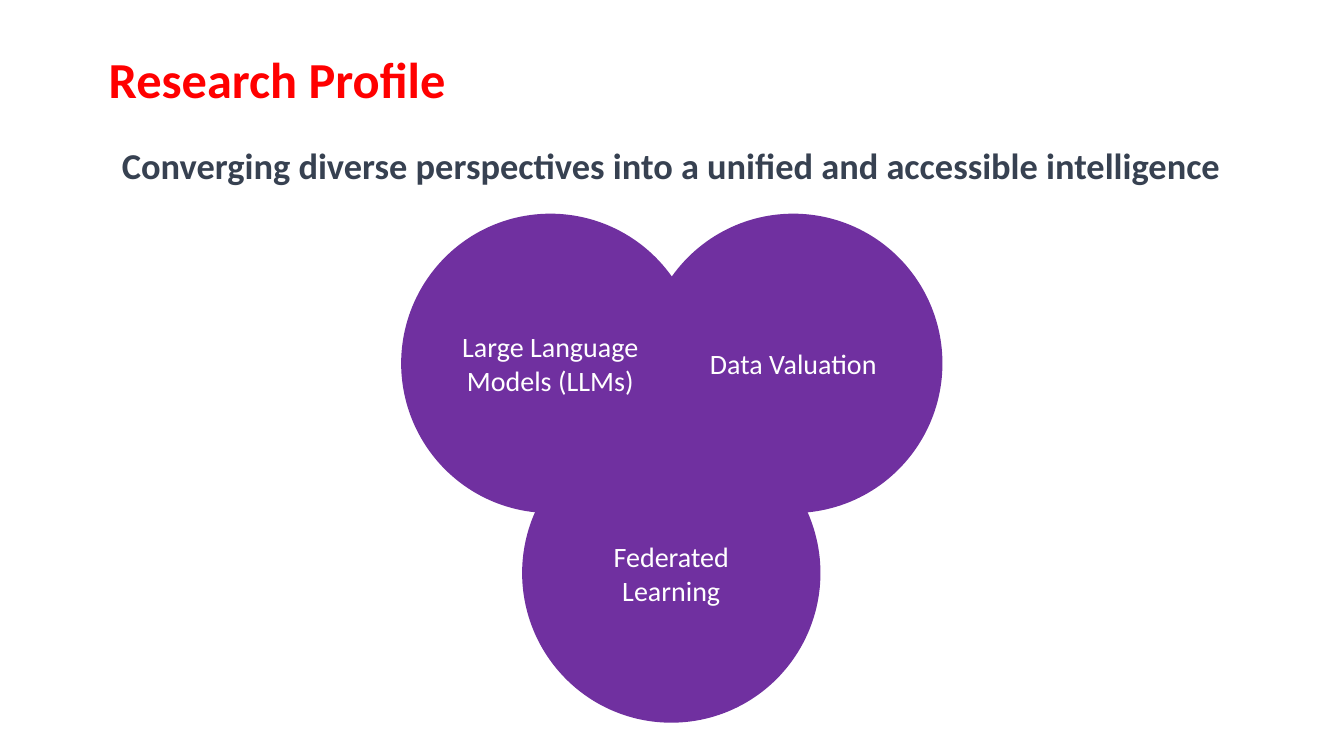
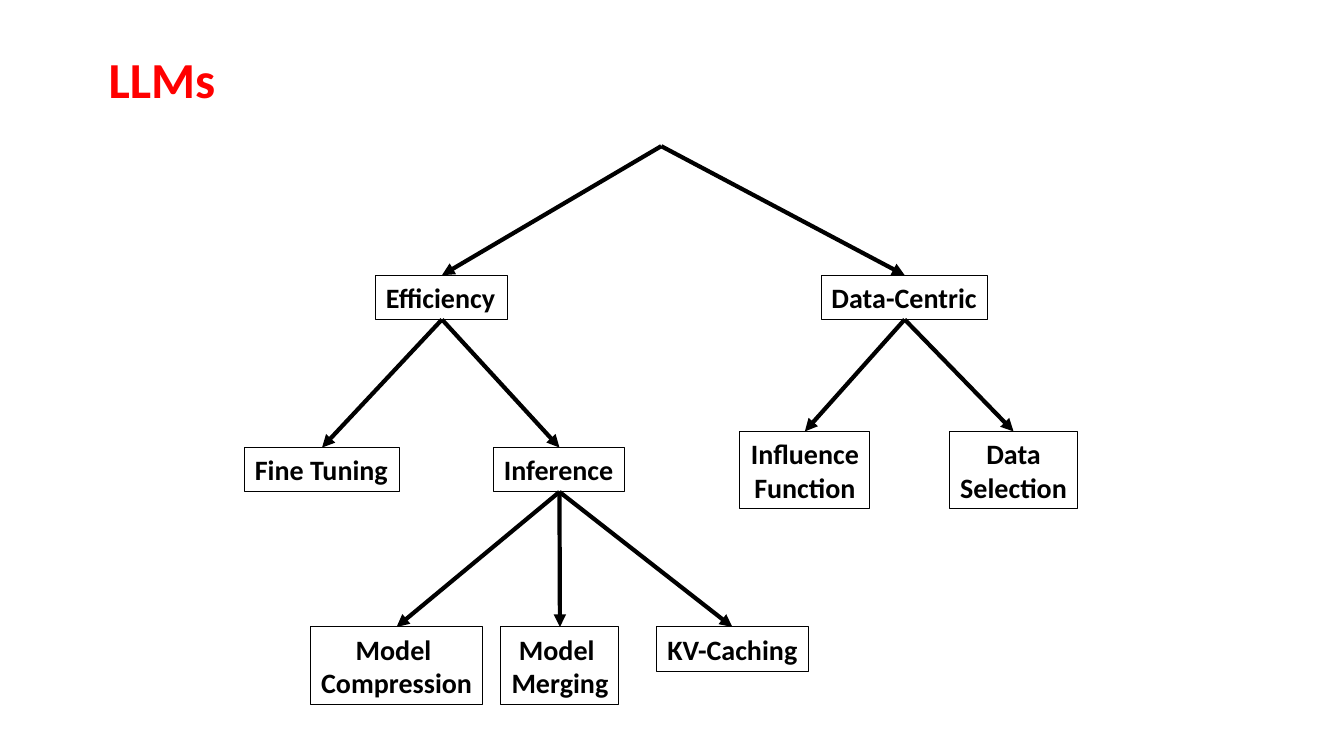
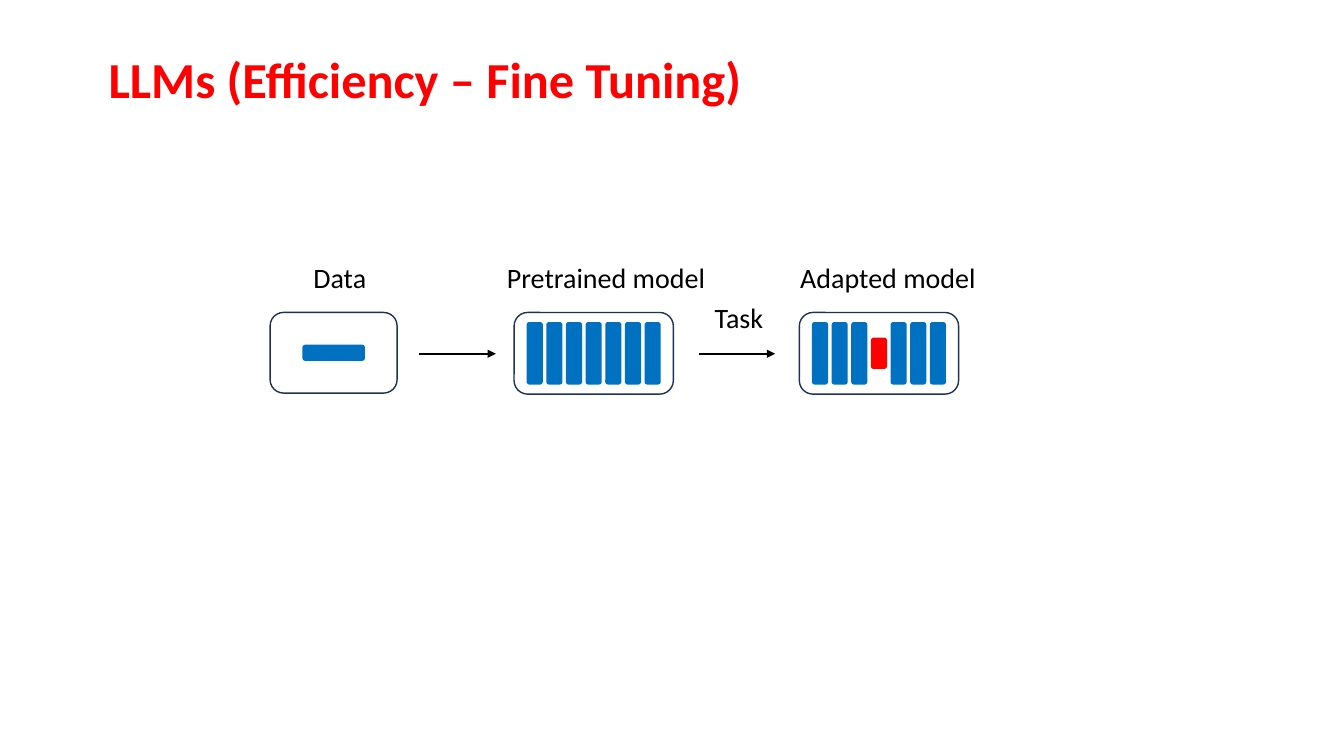
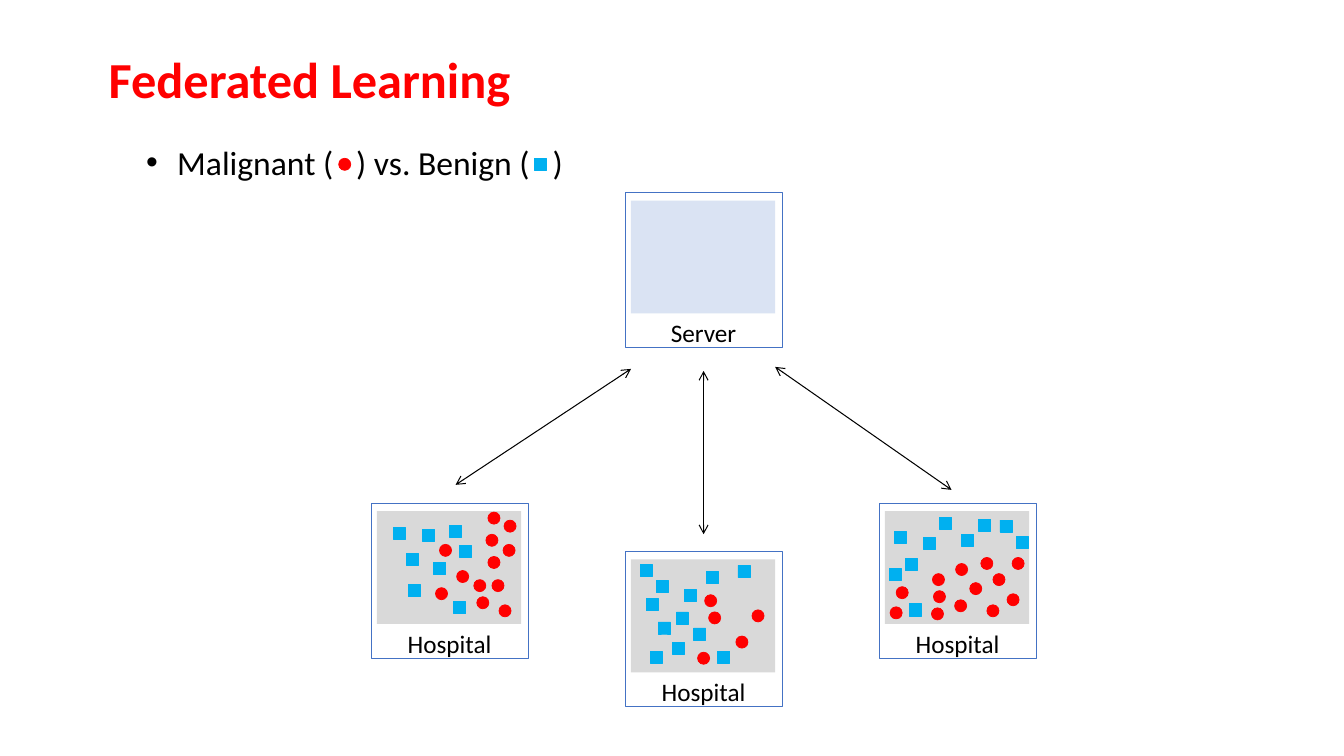
"""Build four slides on a research profile: themes, LLM topics, fine tuning and federated learning."""
from dataclasses import dataclass

from lxml.etree import SubElement
from pptx import Presentation
from pptx.dml.color import RGBColor
from pptx.enum.shapes import MSO_CONNECTOR, MSO_SHAPE as Preset
from pptx.enum.text import MSO_ANCHOR as Anchor, MSO_AUTO_SIZE as AutoSize, PP_ALIGN as Align
from pptx.oxml.ns import qn
from pptx.shapes.autoshape import Shape
from pptx.shapes.connector import Connector
from pptx.slide import Slide
from pptx.util import Emu, Inches, Pt

FONT = "Calibri"
CELL = Inches(0.1)
COLUMNS, ROWS = 133.33, 75
COLORS = {
    "title": "FF0000",
    "subtitle": "374151",
    "theme": "7030A0",
    "text": "000000",
    "on_dark": "FFFFFF",
    "layer": "0070C0",
    "adapter": "FF0000",
    "model_edge": "1E3256",
    "site_edge": "4472C4",
    "server": "DAE3F3",
    "hospital": "D9D9D9",
    "malignant": "FF0000",
    "benign": "00B0F0",
}
MARK = 1.2

Point = tuple[float, float]


@dataclass(frozen=True)
class Box:
    """A rectangle in grid cells."""
    left: float
    top: float
    width: float
    height: float

    @property
    def center(self) -> Point:
        """Return the middle of the rectangle."""
        return self.left + self.width / 2, self.top + self.height / 2


@dataclass(frozen=True)
class Topic:
    """A box of the topic tree and the topic above it."""
    label: str
    box: Box
    parent: str = ""
    align: Align = Align.CENTER


@dataclass(frozen=True)
class Model:
    """A stack of layers, one of which may be an adapter."""
    box: Box
    adapter: int | None = None


@dataclass(frozen=True)
class Site:
    """A framed site with the cases it holds, placed from its corner."""
    label: str
    left: float
    top: float
    fill: str
    benign: tuple[Point, ...] = ()
    malignant: tuple[Point, ...] = ()


def cells(count: float) -> Emu:
    """Turn grid cells into a length."""
    return Emu(round(count * CELL))


def rgb(color: str) -> RGBColor:
    """Look up a named colour."""
    return RGBColor.from_string(COLORS[color])


def centered(center: Point, width: float, height: float) -> Box:
    """Return a box around a point."""
    return Box(center[0] - width / 2, center[1] - height / 2, width, height)


def write(shape: Shape, text: str, size: float, color: str = "text", bold: bool = False,
          align: Align = Align.LEFT, wrap: bool = True, spacing: float | None = None) -> None:
    """Put text of one style in a shape."""
    frame = shape.text_frame
    frame.text = text
    frame.word_wrap = wrap
    for paragraph in frame.paragraphs:
        paragraph.alignment = align
        if spacing:
            paragraph.line_spacing = spacing
        font = paragraph.font
        font.name, font.size, font.bold = FONT, Pt(size), bold
        font.color.rgb = rgb(color)


def add_label(slide: Slide, box: Box, text: str, size: float, color: str = "text",
              bold: bool = False, align: Align = Align.LEFT, wrap: bool = False,
              spacing: float | None = None) -> Shape:
    """Add a text box that grows with its text."""
    label = slide.shapes.add_textbox(*map(cells, (box.left, box.top, box.width, box.height)))
    write(label, text, size, color, bold, align, wrap, spacing)
    label.text_frame.auto_size = AutoSize.SHAPE_TO_FIT_TEXT
    return label


def add_figure(slide: Slide, preset: Preset, box: Box, fill: str = "", edge: str = "",
               edge_width: float = 0.5) -> Shape:
    """Add a flat preset shape."""
    figure = slide.shapes.add_shape(preset, *map(cells, (box.left, box.top, box.width, box.height)))
    figure.shadow.inherit = False
    if fill:
        figure.fill.solid()
        figure.fill.fore_color.rgb = rgb(fill)
    else:
        figure.fill.background()
    if edge:
        figure.line.color.rgb = rgb(edge)
        figure.line.width = Pt(edge_width)
    else:
        figure.line.fill.background()
    return figure


def add_arrow(slide: Slide, start: Point, end: Point, width: float,
              head: str = "", tail: str = "triangle") -> Connector:
    """Add a straight arrow between two grid points."""
    arrow = slide.shapes.add_connector(MSO_CONNECTOR.STRAIGHT, *map(cells, start + end))
    arrow.line.color.rgb = rgb("text")
    arrow.line.width = Pt(width)
    outline = arrow.line._get_or_add_ln()
    for tag, kind in (("a:headEnd", head), ("a:tailEnd", tail)):
        if kind:
            SubElement(outline, qn(tag), type=kind)
    SubElement(arrow._element.spPr, qn("a:effectLst"))
    return arrow


def add_titled_slide(deck: Presentation, title: str, width: float) -> Slide:
    """Add a blank slide with the shared title style."""
    slide = deck.slides.add_slide(deck.slide_layouts[6])
    add_label(slide, Box(9.8, 4.3, width, 7.1), title, 36, "title", bold=True)
    return slide


def add_profile(deck: Presentation) -> None:
    """Draw three overlapping research themes."""
    slide = add_titled_slide(deck, "Research Profile", 35.8)
    add_label(slide, Box(0, 11.5, COLUMNS, 6.9),
              "Converging diverse perspectives into a unified and accessible intelligence",
              26, "subtitle", bold=True, align=Align.CENTER, wrap=True, spacing=1.5)
    themes = (("Large Language Models (LLMs)", 39.8, 21.2),
              ("Data Valuation", 63.9, 21.2),
              ("Federated Learning", 51.8, 42))
    for theme, left, top in themes:
        circle = add_figure(slide, Preset.OVAL, Box(left, top, 29.6, 29.7), "theme")
        write(circle, theme, 20, "on_dark", align=Align.CENTER)


TOPICS = (
    Topic("Efficiency", Box(37.3, 27.3, 13.1, 4.4), align=Align.LEFT),
    Topic("Data-Centric", Box(81.5, 27.3, 16.5, 4.4), align=Align.LEFT),
    Topic("Fine Tuning", Box(24.3, 44.4, 15.3, 4.4), "Efficiency", Align.LEFT),
    Topic("Inference", Box(49, 44.4, 13, 4.4), "Efficiency", Align.LEFT),
    Topic("Influence\nFunction", Box(73.4, 42.8, 12.9, 7.7), "Data-Centric"),
    Topic("Data\nSelection", Box(94.2, 42.8, 12.7, 7.7), "Data-Centric"),
    Topic("Model \vCompression", Box(30.8, 62.2, 17.1, 7.7), "Inference"),
    Topic("Model \vMerging", Box(49.7, 62.2, 11.7, 7.7), "Inference"),
    Topic("KV-Caching", Box(65.1, 62.2, 15.1, 4.4), "Inference"),
)


def add_topic_tree(deck: Presentation) -> None:
    """Draw the tree of LLM topics."""
    slide = add_titled_slide(deck, "LLMs", 12.7)
    root = (65.6, 14.5)
    drawn: dict[str, Shape] = {}
    for topic in TOPICS:
        node = add_figure(slide, Preset.RECTANGLE, topic.box, edge="text", edge_width=0.75)
        write(node, topic.label, 20, bold=True, align=topic.align, wrap=False)
        drawn[topic.label] = node
        branch = add_arrow(slide, root, (topic.box.center[0], topic.box.top), 3)
        if topic.parent:
            branch.begin_connect(drawn[topic.parent], 2)
        branch.end_connect(node, 0)


def add_model(slide: Slide, model: Model, layers: int = 7, pitch: float = 1.95) -> None:
    """Draw a model as a frame around evenly spaced layers."""
    middle, level = model.box.center
    for index in range(layers):
        is_adapter = index == model.adapter
        center = (middle + (index - (layers - 1) / 2) * pitch, level)
        add_figure(slide, Preset.ROUNDED_RECTANGLE,
                   centered(center, 1.6, 3.1 if is_adapter else 6.2),
                   "adapter" if is_adapter else "layer")
    add_figure(slide, Preset.ROUNDED_RECTANGLE, model.box, edge="model_edge", edge_width=1)


def add_fine_tuning(deck: Presentation) -> None:
    """Draw the way from data to an adapted model."""
    slide = add_titled_slide(deck, "LLMs (Efficiency – Fine Tuning)", 66.1)
    data = Box(26.8, 31, 12.6, 8)
    add_figure(slide, Preset.ROUNDED_RECTANGLE, centered(data.center, 6.2, 1.6), "layer")
    add_figure(slide, Preset.ROUNDED_RECTANGLE, data, edge="model_edge", edge_width=1)
    for model in (Model(Box(51, 31, 15.8, 8.1)), Model(Box(79.3, 31, 15.8, 8.1), adapter=3)):
        add_model(slide, model)
    for start in (41.6, 69.3):
        add_arrow(slide, (start, 35.1), (start + 7.6, 35.1), 1.5)
    captions = (("Data", 30.1, 25.4, 7.3), ("Pretrained model", 49.3, 25.4, 21.9),
                ("Adapted model", 78.4, 25.4, 19.6), ("Task", 69.9, 29.3, 6.9))
    for caption, left, top, width in captions:
        add_label(slide, Box(left, top, width, 4.4), caption, 20)


SITES = (
    Site("Server", 62, 19.1, "server"),
    Site("Hospital", 36.8, 49.9, "hospital",
         benign=((3.5, 5), (5.1, 2.6), (6.2, 5.9), (3.7, 8.1), (8.2, 9.8), (7.8, 2.2),
                 (8.8, 4.2), (2.2, 2.4)),
         malignant=((8.5, 6.7), (6.8, 4.1), (6.4, 8.4), (10.5, 9.3), (12, 7.6), (11.6, 5.3),
                    (11.4, 3.1), (13.2, 1.7), (11.6, 0.9), (13.1, 4.1), (10.2, 7.6),
                    (12.7, 10.1))),
    Site("Hospital", 62, 54.7, "hospital",
         benign=((5.9, 3.8), (5.1, 6), (6.8, 7.6), (1.5, 1.3), (3.1, 2.9), (2.1, 4.7),
                 (3.3, 7), (4.7, 9), (2.5, 9.9), (9.2, 9.9), (11.2, 1.4), (8.1, 2)),
         malignant=((7.9, 4.3), (8.3, 6), (7.2, 10), (11, 8.4), (12.6, 5.8))),
    Site("Hospital", 87.2, 49.9, "hospital",
         benign=((1, 6.5), (2.6, 5.5), (1.5, 2.8), (4.4, 3.4), (6, 1.4), (8.2, 3.1),
                 (9.9, 1.6), (12, 1.7), (13.6, 3.3), (3, 10)),
         malignant=((12.7, 9), (10.7, 10.1), (7.6, 6), (9, 7.9), (7.5, 9.6), (11.3, 7),
                    (10.1, 5.4), (13.2, 5.4), (5.3, 7), (5.4, 8.7), (5.2, 10.4),
                    (1.1, 10.3), (1.7, 8.3))),
)


def add_case(slide: Slide, kind: str, left: float, top: float) -> None:
    """Draw a round malignant or square benign case."""
    preset = Preset.OVAL if kind == "malignant" else Preset.RECTANGLE
    add_figure(slide, preset, Box(left, top, MARK, MARK), kind, kind)


def add_site(slide: Slide, site: Site) -> None:
    """Draw a framed site, its label and its cases."""
    add_figure(slide, Preset.RECTANGLE, Box(site.left, site.top, 15.6, 15.4), edge="site_edge")
    add_figure(slide, Preset.RECTANGLE, Box(site.left + 0.6, site.top + 0.8, 14.3, 11.2), site.fill)
    add_label(slide, Box(site.left, site.top + 11.9, 15.6, 4), site.label, 18,
              align=Align.CENTER, wrap=True)
    for kind, cases in (("benign", site.benign), ("malignant", site.malignant)):
        for column, row in cases:
            add_case(slide, kind, site.left + column, site.top + row)


def add_legend(slide: Slide) -> None:
    """Write the bulleted legend, with room for its two marks."""
    legend = add_label(slide, Box(13.5, 13.6, 44.5, 5), "", 24)
    paragraph = legend.text_frame.paragraphs[0]
    for part in ("Malignant (", " ", ") vs. Benign (", " ", ")"):
        run = paragraph.add_run()
        run.text = part
        if part == " ":
            run._r.get_or_add_rPr().set("spc", "1080")
    properties = paragraph._p.get_or_add_pPr()
    properties.set("marL", str(cells(3.1)))
    properties.set("indent", str(cells(-3.1)))
    for place, (tag, name, value) in enumerate((("a:buFont", "typeface", "Arial"),
                                                ("a:buChar", "char", "•"))):
        properties.insert(place, SubElement(properties, qn(tag), {name: value}))
    add_case(slide, "malignant", 33.6, 15.7)
    add_case(slide, "benign", 53, 15.7)


def add_federated_learning(deck: Presentation) -> None:
    """Draw a server that exchanges with three hospitals."""
    slide = add_titled_slide(deck, "Federated Learning", 42.3)
    add_legend(slide)
    for site in SITES:
        add_site(slide, site)
    exchanges = (((62.6, 36.6), (45.2, 48.1)), ((69.8, 36.8), (69.8, 53)),
                 ((76.9, 36.4), (94.4, 48.6)))
    for server_end, hospital_end in exchanges:
        add_arrow(slide, server_end, hospital_end, 0.75, head="arrow", tail="arrow")


def main() -> None:
    """Build and save the deck."""
    deck = Presentation()
    deck.slide_width, deck.slide_height = cells(COLUMNS), cells(ROWS)
    add_profile(deck)
    add_topic_tree(deck)
    add_fine_tuning(deck)
    add_federated_learning(deck)
    deck.save("out.pptx")


if __name__ == "__main__":
    main()
